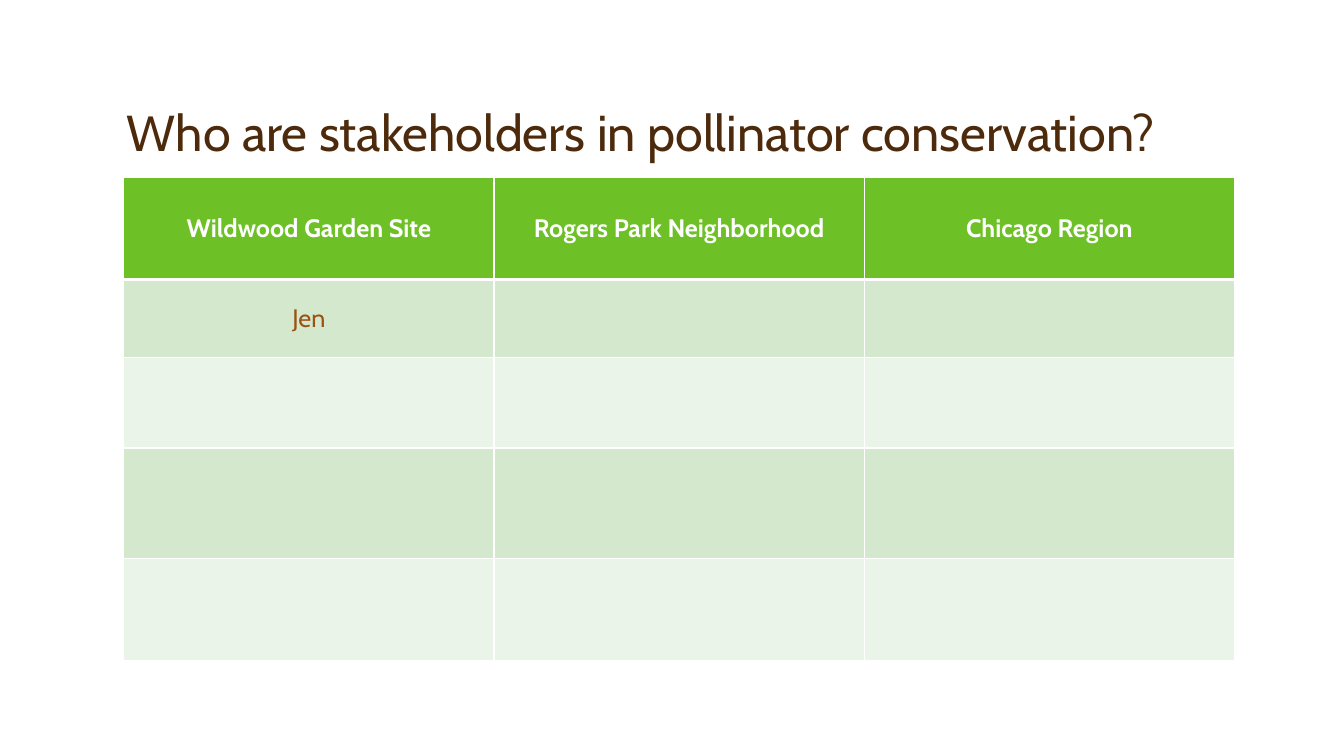
from lxml.etree import SubElement
from pptx import Presentation
from pptx.dml.color import RGBColor as RGB
from pptx.enum.text import MSO_ANCHOR as Anchor, PP_ALIGN as Align
from pptx.oxml.ns import qn
from pptx.util import Cm, Pt

COLORS = {
    "heading": "4D2A0B",
    "body": "9A5315",
    "white": "FFFFFF",
    "header": "6DC025",
    "band_dark": "D4E8CD",
    "band_light": "EBF4E8",
}
TITLE = {"size": Pt(36)}
HEADER = {"size": Pt(18), "bold": True}
BODY = {"size": Pt(18), "bold": False}


class StakeholderSlide:
    """Holds the font and the current slide."""

    def __init__(self, slide, font_name):
        self.slide = slide
        self.font_name = font_name

    def add_text(self, paragraph, text, style, color):
        run = paragraph.add_run()
        run.text = text
        for key, value in {"name": self.font_name, **style}.items():
            setattr(run.font, key, value)
        run.font.color.rgb = RGB.from_string(COLORS[color])

    def title(self, text, left, top, width, height):
        box = self.slide.shapes.add_textbox(Cm(left), Cm(top), Cm(width), Cm(height))
        frame = box.text_frame
        frame.word_wrap = True
        frame.vertical_anchor = Anchor.BOTTOM
        heading = frame.paragraphs[0]
        heading.line_spacing = 0.9
        self.add_text(heading, text, TITLE, "heading")

    def borders(self, cell, widths):
        properties = cell._tc.get_or_add_tcPr()
        for side, width in widths.items():
            line = SubElement(properties, qn(f"a:ln{side}"), w=str(Pt(width)))
            fill = SubElement(line, qn("a:solidFill"))
            SubElement(fill, qn("a:srgbClr"), val=COLORS["white"])

    def table(self, rows, left, top, column_width, heights):
        columns = len(rows[0])
        table = self.slide.shapes.add_table(
            len(rows), columns, Cm(left), Cm(top),
            Cm(column_width * columns), Cm(sum(heights))).table
        for column in table.columns:
            column.width = Cm(column_width)
        for r, (texts, height) in enumerate(zip(rows, heights)):
            table.rows[r].height = Cm(height)
            band = "band_dark" if r % 2 else "band_light"
            for c, text in enumerate(texts):
                cell = table.cell(r, c)
                cell.vertical_anchor = Anchor.MIDDLE
                # Thick rule between the header and the body
                self.borders(cell, {"L": 1, "R": 1,
                                    "T": 3 if r == 1 else 1,
                                    "B": 3 if r == 0 else 1})
                cell.fill.solid()
                cell.fill.fore_color.rgb = RGB.from_string(
                    COLORS[band if r else "header"])
                paragraph = cell.text_frame.paragraphs[0]
                paragraph.alignment = Align.CENTER
                if text:
                    self.add_text(paragraph, text, BODY if r else HEADER,
                                  "body" if r else "white")


def main():
    deck = Presentation()
    deck.slide_width, deck.slide_height = Cm(33.87), Cm(19.05)
    page = StakeholderSlide(deck.slides.add_slide(deck.slide_layouts[6]), "Cabin")

    # Title
    page.title("Who are stakeholders in pollinator conservation?",
               2.95, 0.84, 27.94, 3.38)

    # Stakeholders by scale, with empty rows to fill in
    blank = ["", "", ""]
    stakeholders = [
        ["Wildwood Garden Site", "Rogers Park Neighborhood", "Chicago Region"],
        ["Jen", "", ""],
        blank, blank, blank,
    ]
    page.table(stakeholders, 3.12, 4.47, 9.33, [2.57, 1.96, 2.29, 2.79, 2.57])

    deck.save("out.pptx")


if __name__ == "__main__":
    main()
